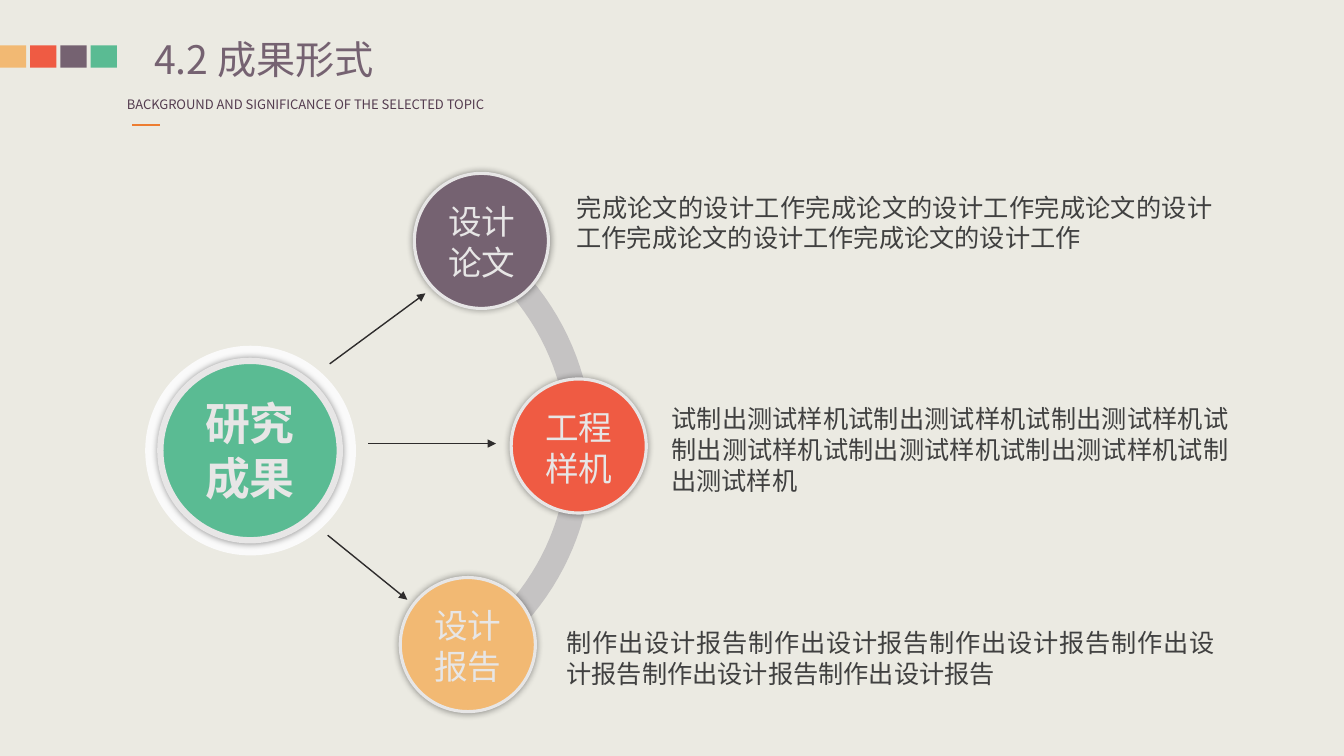
from dataclasses import dataclass

from lxml.etree import SubElement
from pptx import Presentation
from pptx.dml.color import RGBColor
from pptx.enum.shapes import MSO_CONNECTOR as Connector, MSO_SHAPE as Preset
from pptx.enum.text import MSO_AUTO_SIZE as AutoSize, PP_ALIGN as Align
from pptx.oxml.ns import qn
from pptx.util import Pt

EMU_PER_PX = 9144  # 100 px to the inch
FONT = "Noto Sans CJK SC"
LINE_HEIGHT = 1.22
INSET = 10, 5

BACKGROUND, PALE, WHITE = "EBEAE2", "E7E6E6", "FAFAFA"
YELLOW, RED, PURPLE, GREEN = "F2B973", "EF5B43", "756271", "5ABB93"
ORANGE, PLUM, BODY, INK, ARC = "ED7D31", "543C4F", "404040", "2E2C2C", "C5C3C3"

Point = tuple[int, int]
Box = tuple[int, int, int, int]


@dataclass
class Text:
    content: str
    box: Box
    size: float
    color: str
    align: Align = Align.LEFT
    bold: bool = False
    wrap: bool = True
    inset: Point = INSET


@dataclass
class Disc:
    box: Box
    color: str
    border: float
    label: Text


@dataclass
class Line:
    start: Point
    end: Point
    color: str
    width: float
    arrow: bool = False


def px(length: float) -> int:
    return round(length * EMU_PER_PX)


def rgb(color: str) -> RGBColor:
    return RGBColor.from_string(color)


def label(content: str, box: Box, size: int = 24, bold: bool = False) -> Text:
    return Text(content, box, size, PALE, Align.CENTER, bold)


def body(content: str, box: Box) -> Text:
    return Text(content, box, 18, BODY, Align.JUSTIFY)


def add_text(slide, text: Text) -> None:
    shape = slide.shapes.add_textbox(*map(px, text.box))
    frame = shape.text_frame
    frame.text = text.content
    frame.word_wrap = text.wrap
    frame.auto_size = AutoSize.SHAPE_TO_FIT_TEXT
    frame.margin_left = frame.margin_right = px(text.inset[0])
    frame.margin_top = frame.margin_bottom = px(text.inset[1])
    paragraph = frame.paragraphs[0]
    paragraph.alignment = text.align
    paragraph.line_spacing = Pt(text.size * LINE_HEIGHT)
    font = paragraph.runs[0].font
    font.name, font.size, font.bold = FONT, Pt(text.size), text.bold
    font.color.rgb = rgb(text.color)
    properties = paragraph.runs[0]._r.get_or_add_rPr()
    SubElement(properties, qn("a:ea"), typeface=FONT)


def paint(shape, color: str) -> None:
    shape.shadow.inherit = False
    shape.fill.solid()
    shape.fill.fore_color.rgb = rgb(color)
    shape.line.fill.background()


def add_preset(slide, preset: Preset, box: Box, color: str):
    shape = slide.shapes.add_shape(preset, *map(px, box))
    paint(shape, color)
    return shape


def add_disc(slide, disc: Disc) -> None:
    shape = add_preset(slide, Preset.OVAL, disc.box, disc.color)
    shape.line.color.rgb = rgb(PALE)
    shape.line.width = Pt(disc.border)
    # Soft shadow all round
    effects = shape._element.spPr.find(qn("a:effectLst"))
    shadow = SubElement(effects, qn("a:outerShdw"), blurRad=str(Pt(5)), dist="0", dir="0")
    black = SubElement(shadow, qn("a:srgbClr"), val="000000")
    SubElement(black, qn("a:alpha"), val="40000")
    add_text(slide, disc.label)


def add_line(slide, line: Line) -> None:
    connector = slide.shapes.add_connector(
        Connector.STRAIGHT, *map(px, line.start + line.end))
    connector.line.color.rgb = rgb(line.color)
    connector.line.width = Pt(line.width)
    if line.arrow:
        SubElement(connector.line._get_or_add_ln(), qn("a:tailEnd"), type="triangle")
    SubElement(connector._element.spPr, qn("a:effectLst"))


def curve(a: Point, b: Point, c: Point, d: Point, steps: int = 24) -> list[Point]:
    """Points along a cubic Bezier curve, in EMU."""
    points = []
    for step in range(steps + 1):
        t = step / steps
        weights = (1 - t) ** 3, 3 * t * (1 - t) ** 2, 3 * t * t * (1 - t), t ** 3
        points.append(tuple(
            px(sum(weight * value for weight, value in zip(weights, axis)))
            for axis in zip(a, b, c, d)))
    return points


def add_arc(slide) -> None:
    inner = (curve((447, 242), (516, 283), (563, 358), (563, 444))
             + curve((563, 444), (563, 529), (518, 603), (451, 644))[1:])
    outer = (curve((463, 666), (538, 621), (588, 538), (588, 444))
             + curve((588, 444), (588, 349), (536, 265), (459, 220))[1:])
    builder = slide.shapes.build_freeform(*inner[0])
    builder.add_line_segments(inner[1:] + outer, close=True)
    paint(builder.convert_to_shape(), ARC)


SQUARES = [YELLOW, RED, PURPLE, GREEN]

HEADINGS = [
    Text("BACKGROUND AND SIGNIFICANCE OF THE SELECTED TOPIC",
         (116, 91, 407, 26), 9.3, PLUM, wrap=False),
    Text("4.2 成果形式", (153, 34, 399, 47), 28, PURPLE, inset=(0, 0)),
]

LINES = [
    Line((131, 124), (159, 124), ORANGE, 1.5),
    Line((327, 361), (422, 291), INK, 1, arrow=True),
    Line((365, 440), (492, 440), INK, 1, arrow=True),
    Line((325, 531), (404, 595), INK, 1, arrow=True),
]

HUB_HALO = 144, 343, 209, 208
DISCS = [
    Disc((411, 172, 133, 134), PURPLE, 2.25, label("设计论文", (430, 194, 96, 91))),
    Disc((507, 376, 134, 133), RED, 2.25, label("工程样机", (526, 398, 96, 91))),
    Disc((397, 573, 134, 133), YELLOW, 2.25, label("设计报告", (416, 594, 96, 91))),
    Disc((159, 358, 178, 178), GREEN, 4.5,
         label("研究成果", (191, 387, 114, 118), 32, bold=True)),
]

DESCRIPTIONS = [
    body("完成论文的设计工作" * 5, (562, 185, 651, 71)),
    body("试制出测试样机" * 7, (656, 395, 573, 101)),
    body("制作出设计报告" * 6, (552, 617, 663, 71)),
]


def main() -> None:
    presentation = Presentation()
    presentation.slide_width, presentation.slide_height = px(1333), px(750)
    slide = presentation.slides.add_slide(presentation.slide_layouts[6])
    slide.background.fill.solid()
    slide.background.fill.fore_color.rgb = rgb(BACKGROUND)

    # Header
    for index, color in enumerate(SQUARES):
        add_preset(slide, Preset.RECTANGLE, (index * 30, 45, 26, 22), color)
    for heading in HEADINGS:
        add_text(slide, heading)

    # Arc and lines, then the discs over them
    add_arc(slide)
    for line in LINES:
        add_line(slide, line)
    add_preset(slide, Preset.OVAL, HUB_HALO, WHITE)
    for disc in DISCS:
        add_disc(slide, disc)

    # Descriptions
    for description in DESCRIPTIONS:
        add_text(slide, description)

    presentation.save("out.pptx")


if __name__ == "__main__":
    main()
